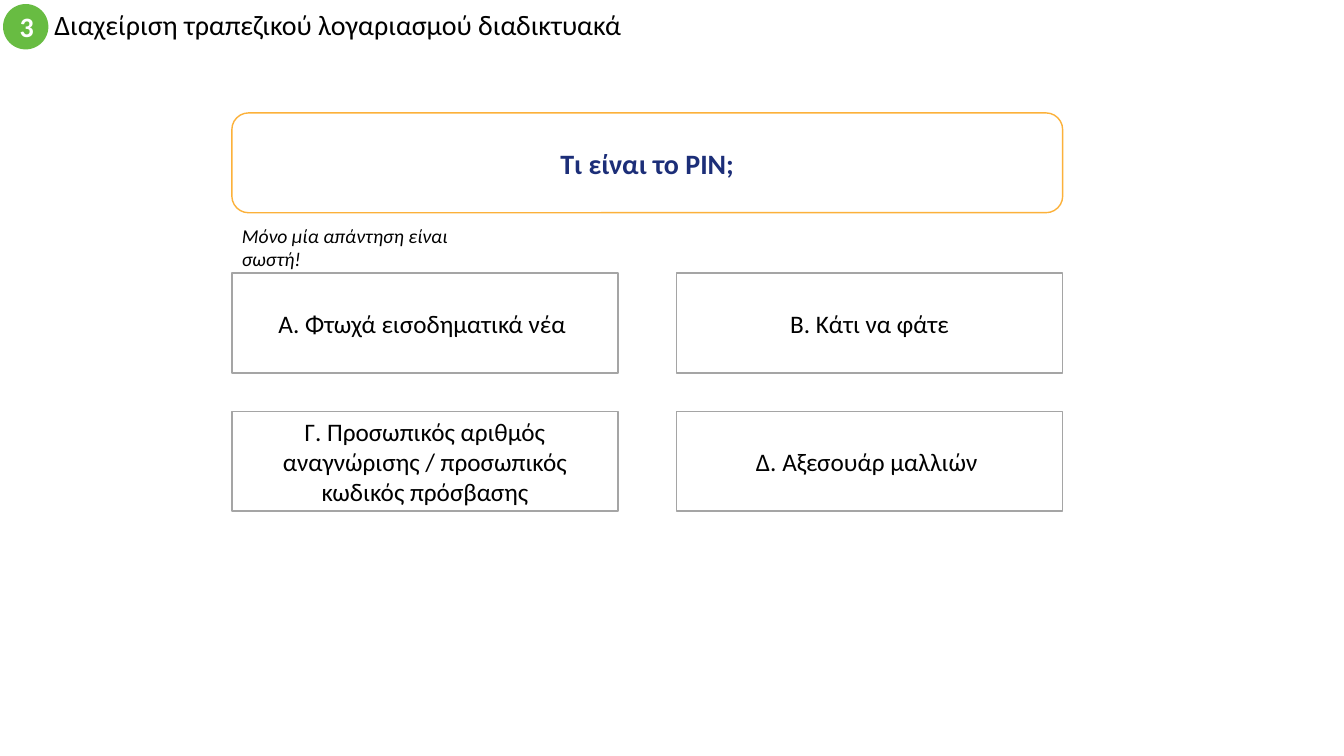
import pptx
import pptx.util
from pptx.dml.color import RGBColor
from pptx.enum.shapes import MSO_SHAPE
from pptx.enum.text import MSO_ANCHOR, PP_ALIGN

Inches = pptx.util.Inches
Pt = pptx.util.Pt

WHITE = RGBColor(0xFF, 0xFF, 0xFF)
BLACK = RGBColor(0x00, 0x00, 0x00)
GREEN = RGBColor(0x68, 0xBC, 0x42)
ORANGE = RGBColor(0xFC, 0xB1, 0x3A)
NAVY = RGBColor(0x1C, 0x2E, 0x78)
GREY = RGBColor(0xA5, 0xA5, 0xA5)

FONT = "Calibri"
GRID_LEFT, GRID_TOP = 2.3, 2.71
ANSWER_WIDTH, ROW_HEIGHT = 3.83, 0.99
COLUMN_STEP, ROW_STEP = 4.41, 1.37
QUESTION_TOP = 1.12
GRID_WIDTH = COLUMN_STEP + ANSWER_WIDTH

ANSWERS = [
    ["A. Φτωχά εισοδηματικά νέα ", "B. Κάτι να φάτε"],
    ["Γ. Προσωπικός αριθμός αναγνώρισης / προσωπικός κωδικός πρόσβασης",
     "Δ. Αξεσουάρ μαλλιών "],
]


def write(frame, text, size=18, color=BLACK, bold=False, italic=False,
          align=PP_ALIGN.LEFT, anchor=MSO_ANCHOR.MIDDLE, line_spacing=None):
    frame.word_wrap = True
    frame.vertical_anchor = anchor
    paragraph = frame.paragraphs[0]
    paragraph.alignment = align
    paragraph.line_spacing = line_spacing
    run = paragraph.add_run()
    run.text = text
    font = run.font
    font.name, font.size = FONT, Pt(size)
    font.bold, font.italic = bold, italic
    font.color.rgb = color


def add_label(slide, box, text, **text_format):
    label = slide.shapes.add_textbox(*map(Inches, box))
    write(label.text_frame, text, **text_format)


def add_panel(slide, preset, box, text, fill=WHITE, outline=None, **text_format):
    """Add a filled shape with centred text and an optional outline."""
    panel = slide.shapes.add_shape(preset, *map(Inches, box))
    panel.shadow.inherit = False
    panel.fill.solid()
    panel.fill.fore_color.rgb = fill
    if outline is None:
        panel.line.fill.background()
    else:
        panel.line.color.rgb = outline
        panel.line.width = Pt(1)
    write(panel.text_frame, text, align=PP_ALIGN.CENTER, **text_format)


def add_header(slide, number, title):
    add_label(slide, (0.44, 0.04, 8, 0.45), title, size=20, line_spacing=0.9)
    add_panel(slide, MSO_SHAPE.OVAL, (0.03, 0.04, 0.45, 0.45), number,
              fill=GREEN, size=20, color=WHITE, bold=True)


def add_answers(slide):
    for row, answers in enumerate(ANSWERS):
        for column, answer in enumerate(answers):
            box = (GRID_LEFT + column * COLUMN_STEP, GRID_TOP + row * ROW_STEP,
                   ANSWER_WIDTH, ROW_HEIGHT)
            add_panel(slide, MSO_SHAPE.RECTANGLE, box, answer, outline=GREY)


def main():
    deck = pptx.Presentation()
    deck.slide_width, deck.slide_height = Inches(13.33), Inches(7.5)
    slide = deck.slides.add_slide(deck.slide_layouts[6])

    add_header(slide, "3", "Διαχείριση τραπεζικού λογαριασμού διαδικτυακά")
    add_panel(slide, MSO_SHAPE.ROUNDED_RECTANGLE,
              (GRID_LEFT, QUESTION_TOP, GRID_WIDTH, ROW_HEIGHT),
              "Τι είναι το PIN;", outline=ORANGE, size=20, color=NAVY, bold=True)
    add_answers(slide)
    add_label(slide, (GRID_LEFT, 2.17, 2.36, 0.34),
              "Μόνο μία απάντηση είναι σωστή!",
              size=14, italic=True, anchor=MSO_ANCHOR.TOP)

    deck.save("out.pptx")


if __name__ == "__main__":
    main()
